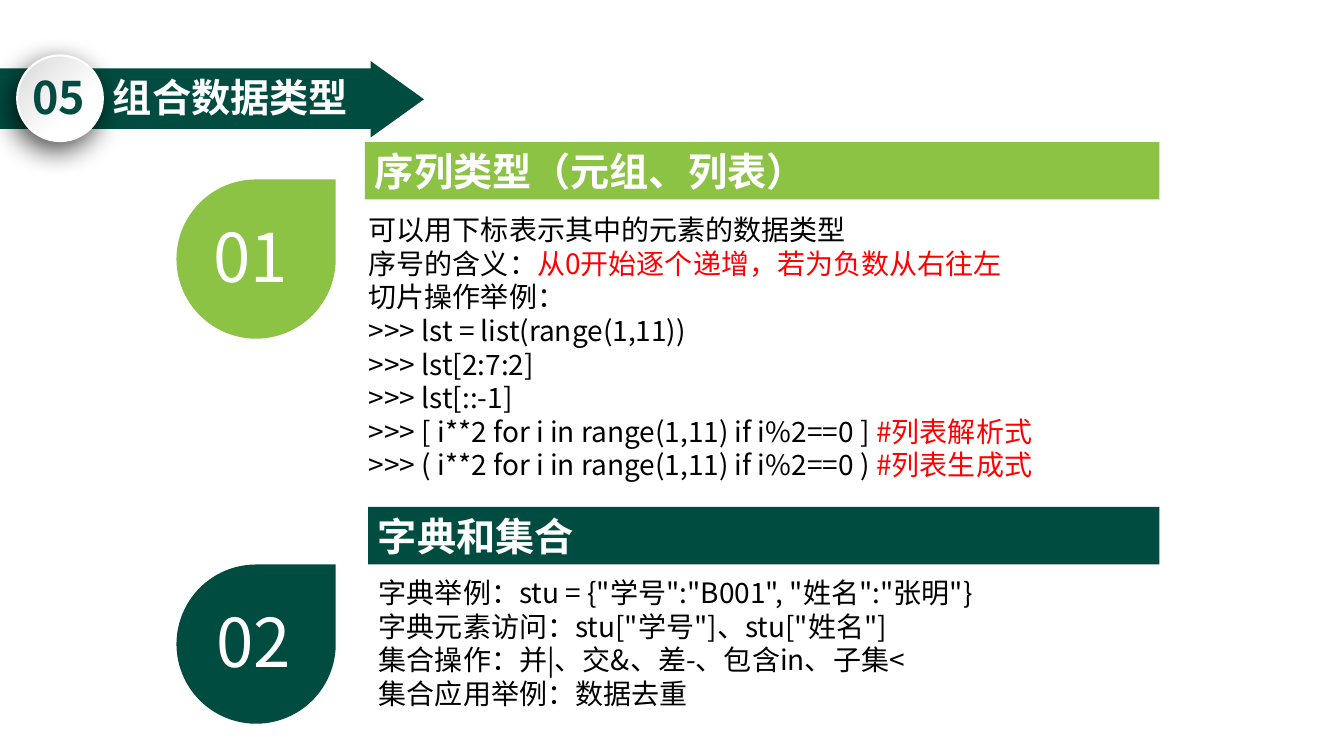
import pptx
import pptx.util
import pptx.dml.color
import pptx.enum.shapes
import pptx.enum.text
import pptx.oxml
import pptx.oxml.ns

Inches = pptx.util.Inches
RGB = pptx.dml.color.RGBColor
SHAPE = pptx.enum.shapes.MSO_SHAPE
ALIGN = pptx.enum.text.PP_ALIGN
ANCHOR = pptx.enum.text.MSO_ANCHOR
WHITE = RGB(0xFF, 0xFF, 0xFF)
BLACK = RGB(0, 0, 0)
RED = RGB(0xFF, 0, 0)
DARK = RGB(0x00, 0x4C, 0x40)
LIME = RGB(0x8C, 0xC3, 0x44)
GREY = RGB(0xDB, 0xDB, 0xDD)
FONT = "Noto Sans CJK SC"
XMLNS = pptx.oxml.ns.nsdecls("a")

SEQUENCE = [
    [("可以用下标表示其中的元素的数据类型", BLACK)],
    [("序号的含义：", BLACK), ("从0开始逐个递增，若为负数从右往左", RED)],
    [("切片操作举例：", BLACK)],
    [(">>> lst = list(range(1,11))", BLACK)],
    [(">>> lst[2:7:2]", BLACK)],
    [(">>> lst[::-1]", BLACK)],
    [(">>> [ i**2 for i in range(1,11) if i%2==0 ] ", BLACK), ("#列表解析式", RED)],
    [(">>> ( i**2 for i in range(1,11) if i%2==0 ) ", BLACK), ("#列表生成式", RED)],
]
MAPPING = [
    [('字典举例：stu = {"学号":"B001", "姓名":"张明"}', BLACK)],
    [('字典元素访问：stu["学号"]、stu["姓名"]', BLACK)],
    [("集合操作：并|、交&、差-、包含in、子集<", BLACK)],
    [("集合应用举例：数据去重", BLACK)],
]


def style(run, size, color, bold=False):
    run.font.size = pptx.util.Pt(size)
    run.font.bold = bold
    run.font.color.rgb = color
    run.font.name = FONT
    props = run.font._element
    props.append(pptx.oxml.parse_xml(f'<a:ea {XMLNS} typeface="{FONT}"/>'))


def write(shape, lines, size, bold=False, align=ALIGN.LEFT, anchor=ANCHOR.TOP, wrap=True):
    """Fill a shape with lines, each a list of (text, colour) runs."""
    frame = shape.text_frame
    frame.word_wrap = wrap
    frame.vertical_anchor = anchor
    for index, line in enumerate(lines):
        para = frame.add_paragraph() if index else frame.paragraphs[0]
        para.alignment = align
        for text, color in line:
            run = para.add_run()
            run.text = text
            style(run, size, color, bold)


def solid(slide, kind, left, top, width, height, color):
    shape = slide.shapes.add_shape(
        kind, Inches(left), Inches(top), Inches(width), Inches(height))
    shape.shadow.inherit = False
    shape.fill.solid()
    shape.fill.fore_color.rgb = color
    shape.line.fill.background()
    return shape


def label(slide, left, top, width, height):
    return slide.shapes.add_textbox(
        Inches(left), Inches(top), Inches(width), Inches(height))


def badge(slide, left, top, size, number):
    """Round number badge with a soft gradient and a drop shadow."""
    disc = solid(slide, SHAPE.OVAL, left, top, size, size, WHITE)
    disc.line.color.rgb = WHITE
    disc.line.width = pptx.util.Pt(1.5)
    props = disc._element.spPr
    props.replace(props.find(pptx.oxml.ns.qn("a:solidFill")), pptx.oxml.parse_xml(
        f'<a:gradFill {XMLNS} rotWithShape="1"><a:gsLst>'
        f'<a:gs pos="34000"><a:srgbClr val="{WHITE}"/></a:gs>'
        f'<a:gs pos="96000"><a:srgbClr val="{GREY}"/></a:gs></a:gsLst>'
        '<a:path path="circle"><a:fillToRect l="100000" t="100000"/></a:path>'
        '</a:gradFill>'))
    props.find(pptx.oxml.ns.qn("a:effectLst")).append(pptx.oxml.parse_xml(
        f'<a:outerShdw {XMLNS} blurRad="254000" dist="88900" dir="7200000">'
        f'<a:srgbClr val="{BLACK}"><a:alpha val="70000"/></a:srgbClr></a:outerShdw>'))
    box = label(slide, left + 0.05, top + 0.09, 0.76, 0.64)
    write(box, [[(number, DARK)]], 32, bold=True, wrap=False)


def banner(slide, top, number, text):
    """Arrow across the left edge, with the slide title and its number."""
    solid(slide, SHAPE.RECTANGLE, 0, top, 3.68, 0.6, DARK)
    tip = solid(slide, SHAPE.ISOSCELES_TRIANGLE, 3.56, top + 0.04, 0.76, 0.53, DARK)
    tip.rotation = 90
    title = slide.shapes.title
    title.left, title.top = Inches(1.02), Inches(top)
    title.width, title.height = Inches(7.76), Inches(0.87)
    write(title, [[(text, WHITE)]], 28, bold=True)
    tree = title._element.getparent()
    tree.append(title._element)
    badge(slide, 0.17, top - 0.13, 0.85, number)


def drop(slide, left, top, number, shift, color):
    solid(slide, SHAPE.TEAR, left, top, 1.58, 1.58, color)
    box = label(slide, left + shift, top + 0.3, 0.99, 0.91)
    write(box, [[(number, WHITE)]], 48, align=ALIGN.CENTER,
          anchor=ANCHOR.MIDDLE, wrap=False)


def section(slide, left, top, heading, lines, indent, gap, height, color):
    """Coloured heading bar ending at a shared right edge, with text below."""
    right = 11.5
    bar = solid(slide, SHAPE.RECTANGLE, left, top, right - left, 0.57, color)
    write(bar, [[(heading, WHITE)]], 28, bold=True, anchor=ANCHOR.MIDDLE)
    body = label(slide, left + indent, top + gap, 7.93, height)
    write(body, lines, 20, align=ALIGN.JUSTIFY)


def main():
    deck = pptx.Presentation()
    deck.slide_width, deck.slide_height = Inches(13.33), Inches(7.5)
    slide = deck.slides.add_slide(deck.slide_layouts[5])
    banner(slide, 0.68, "05", "组合数据类型")
    drop(slide, 1.75, 1.78, "01", 0.24, LIME)
    section(slide, 3.62, 1.41, "序列类型（元组、列表）", SEQUENCE, -0.06, 0.65, 2.79, LIME)
    drop(slide, 1.75, 5.6, "02", 0.27, DARK)
    section(slide, 3.65, 5.03, "字典和集合", MAPPING, 0.01, 0.63, 1.45, DARK)
    deck.save("out.pptx")


if __name__ == "__main__":
    main()
